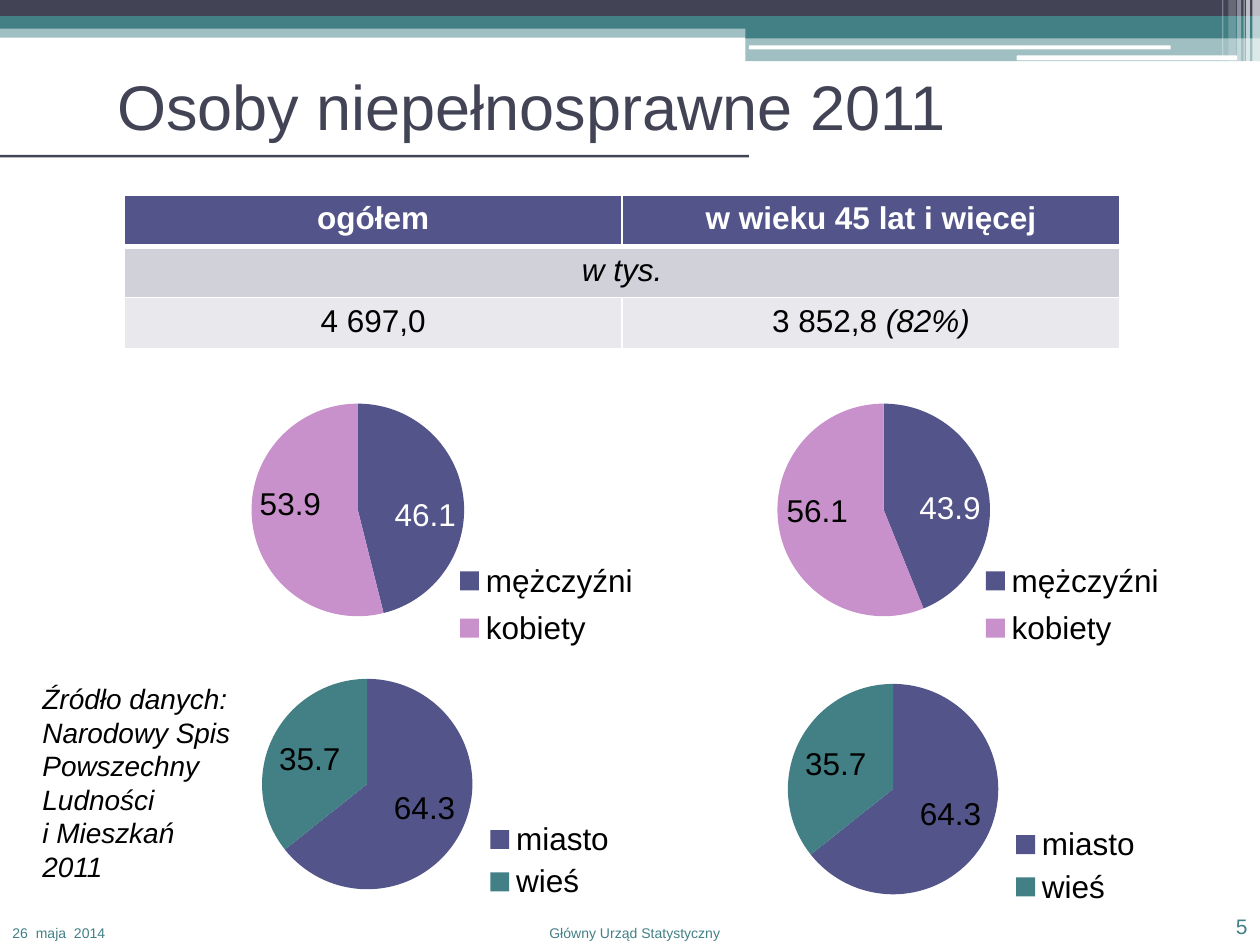
from lxml import etree
from pptx import Presentation
from pptx.chart.data import CategoryChartData
from pptx.dml.color import RGBColor
from pptx.enum.chart import XL_CHART_TYPE, XL_LABEL_POSITION, XL_LEGEND_POSITION
from pptx.enum.shapes import MSO_SHAPE
from pptx.enum.text import MSO_ANCHOR, PP_ALIGN
from pptx.oxml import parse_xml
from pptx.oxml.ns import nsdecls, qn
from pptx.util import Pt

RECTANGLE, ROUNDED = MSO_SHAPE.RECTANGLE, MSO_SHAPE.ROUNDED_RECTANGLE
LEFT, CENTER, RIGHT = PP_ALIGN.LEFT, PP_ALIGN.CENTER, PP_ALIGN.RIGHT
TOP, MIDDLE, BOTTOM = MSO_ANCHOR.TOP, MSO_ANCHOR.MIDDLE, MSO_ANCHOR.BOTTOM
PIE, INSIDE_END = XL_CHART_TYPE.PIE, XL_LABEL_POSITION.INSIDE_END
LEGEND_BOTTOM = XL_LEGEND_POSITION.BOTTOM

DARK, TEAL, VIOLET, PINK = "424456", "438086", "53548A", "C991CB"
WHITE, BLACK = "FFFFFF", "000000"


def color(value):
    return RGBColor.from_string(value)


def write(frame, text, size=18, fill=BLACK, bold=False, italic=False,
          align=LEFT, font="Arial"):
    """Add text to the first paragraph; a newline becomes a line break."""
    para = frame.paragraphs[0]
    para.alignment = align
    for index, line in enumerate(text.split("\n")):
        if index:
            para.add_line_break()
        span = para.add_run()
        span.text = line
        span.font.name, span.font.size = font, Pt(size)
        span.font.bold, span.font.italic = bold, italic
        span.font.color.rgb = color(fill)
    return para


def manual_layout(x, y, width, height, inner=False):
    target = '<c:layoutTarget val="inner"/>' if inner else ""
    return parse_xml(
        f'<c:layout {nsdecls("c")}><c:manualLayout>{target}'
        '<c:xMode val="edge"/><c:yMode val="edge"/>'
        f'<c:x val="{x}"/><c:y val="{y}"/><c:w val="{width}"/><c:h val="{height}"/>'
        '</c:manualLayout></c:layout>')


class Builder:
    def __init__(self, page, font="Arial"):
        self.page = page
        self.font = font

    def band(self, left, top, width, height, fill, opacity=100, kind=RECTANGLE):
        shape = self.page.shapes.add_shape(kind, Pt(left), Pt(top), Pt(width), Pt(height))
        shape.shadow.inherit = False
        shape.line.fill.background()
        shape.fill.solid()
        shape.fill.fore_color.rgb = color(fill)
        if opacity < 100:
            tint = shape.fill._xPr.find(".//" + qn("a:srgbClr"))
            etree.SubElement(tint, qn("a:alpha"), val=str(opacity * 1000))

    def text(self, left, top, width, height, text, anchor=TOP, indent=0, **style):
        box = self.page.shapes.add_textbox(Pt(left), Pt(top), Pt(width), Pt(height))
        box.text_frame.word_wrap = True
        box.text_frame.vertical_anchor = anchor
        para = write(box.text_frame, text, font=self.font, **style)
        if indent:
            para._p.get_or_add_pPr().set("marL", str(Pt(indent)))

    def cell(self, cell, fill, bottom=1):
        for side, weight in (("L", 1), ("R", 1), ("T", 1), ("B", bottom)):
            cell._tc.get_or_add_tcPr().append(parse_xml(
                f'<a:ln{side} {nsdecls("a")} w="{Pt(weight)}"><a:solidFill>'
                f'<a:srgbClr val="{WHITE}"/></a:solidFill></a:ln{side}>'))
        cell.fill.solid()
        cell.fill.fore_color.rgb = color(fill)

    def table(self, left, top, width, height, rows, fills):
        """Each cell is a list of (text, format) pairs; None joins the cell before."""
        table = self.page.shapes.add_table(
            len(rows), len(rows[0]), Pt(left), Pt(top), Pt(width), Pt(height)).table
        for r, (row, fill) in enumerate(zip(rows, fills)):
            for c, spans in enumerate(row):
                cell = table.cell(r, c)
                self.cell(cell, fill, bottom=1 if r else 3)
                if spans is None:
                    table.cell(r, c - 1).merge(cell)
                    continue
                for text, style in spans:
                    write(cell.text_frame, text, align=CENTER, font=self.font, **style)

    def pie(self, left, top, width, height, shares, fills, plot, legend, first_label=BLACK):
        data = CategoryChartData(number_format="0.0")
        data.categories = list(shares)
        data.add_series("Series 1", list(shares.values()))
        chart = self.page.shapes.add_chart(
            PIE, Pt(left), Pt(top), Pt(width), Pt(height), data).chart
        chart.has_title = False
        chart.font.name, chart.font.size = self.font, Pt(18)
        chart.font.color.rgb = color(BLACK)

        chart.has_legend = True
        chart.legend.position = LEGEND_BOTTOM
        chart.legend.include_in_layout = False
        chart.legend._element.find(qn("c:legendPos")).addnext(manual_layout(*legend))
        area = chart._chartSpace.find(".//" + qn("c:plotArea"))
        for old in area.findall(qn("c:layout")):
            area.remove(old)
        area.insert(0, manual_layout(*plot, inner=True))

        pie = chart.plots[0]
        pie.vary_by_categories = True
        for index, fill in enumerate(fills):
            point = pie.series[0].points[index]
            point.format.fill.solid()
            point.format.fill.fore_color.rgb = color(fill)
            label = point.data_label
            label.font.size, label.font.name = Pt(18), self.font
            label.font.color.rgb = color(BLACK if index else first_label)
            label.position = INSIDE_END
        labels = pie.series[0].data_labels
        labels.show_value = True
        labels.position = INSIDE_END


def main():
    deck = Presentation()
    deck.slide_width, deck.slide_height = Pt(720), Pt(540)
    slide = Builder(deck.slides.add_slide(deck.slide_layouts[6]))

    # Header bands
    slide.band(0, 15, 720, 6.5, TEAL, 50)
    slide.band(0, 0, 720, 9.2, DARK)
    slide.band(0, 9.2, 720, 7.2, TEAL)
    slide.band(426, 15, 294, 7, TEAL)
    slide.band(426, 21, 294, 14, TEAL, 50)
    slide.band(428, 26, 241, 2.2, WHITE, kind=ROUNDED)
    slide.band(581, 31.7, 126, 2.9, WHITE, kind=ROUNDED)

    # Pale stripes at the right edge
    for left, width, height, opacity in (
            (715.7, 4.3, 49, 65), (712.1, 2.2, 49, 65), (710.6, 0.7, 49, 60),
            (707, 2.2, 49, 40), (702, 4.3, 46, 20), (698.4, 0.7, 46, 30)):
        slide.band(left, 0, width, height, WHITE, opacity)

    # Title and its rule
    slide.band(0, 88.5, 428, 1.4, DARK)
    slide.text(59.8, 37.4, 630, 45.4, "Osoby niepełnosprawne 2011",
               anchor=MIDDLE, size=36, fill=DARK)

    # Table of totals
    header, italic = {"fill": WHITE, "bold": True}, {"italic": True}
    slide.table(71, 111.5, 569, 87.6, [
        [[("ogółem", header)], [("w wieku 45 lat i więcej", header)]],
        [[("w tys.", italic)], None],
        [[("4 697,0", {})], [("3 852,8 ", {}), ("(82%)", italic)]],
    ], [VIOLET, "D1D1DA", "E9E9ED"])

    # Pies: by sex above, by place of residence below
    for left, men, women, lower_top in ((127.4, 46.1, 53.9, 363.6),
                                        (427.9, 43.9, 56.1, 366.5)):
        slide.pie(left, 204.5, 244, 175.7, {"mężczyźni": men, "kobiety": women},
                  (VIOLET, PINK), plot=(0.067, 0.148, 0.498, 0.694),
                  legend=(0.55, 0.63, 0.43, 0.345), first_label=WHITE)
        slide.pie(left, lower_top, 230.4, 163.4, {"miasto": 64.3, "wieś": 35.7},
                  (VIOLET, TEAL), plot=(0.088, 0.149, 0.54, 0.736),
                  legend=(0.66, 0.625, 0.32, 0.32))

    # Source and footer
    slide.text(8.6, 386, 131, 127.4,
               "Źródło danych: Narodowy Spis Powszechny Ludności \ni Mieszkań 2011",
               indent=8.6, size=16, italic=True)
    slide.text(0, 525, 76.3, 15, "26  maja  2014", size=8, fill=TEAL)
    slide.text(275, 525, 175.7, 15, "Główny Urząd Statystyczny",
               size=8, fill=TEAL, align=CENTER)
    slide.text(660, 519, 60, 21, "5", anchor=BOTTOM, size=12, fill=TEAL, align=RIGHT)

    deck.save("out.pptx")


if __name__ == "__main__":
    main()
